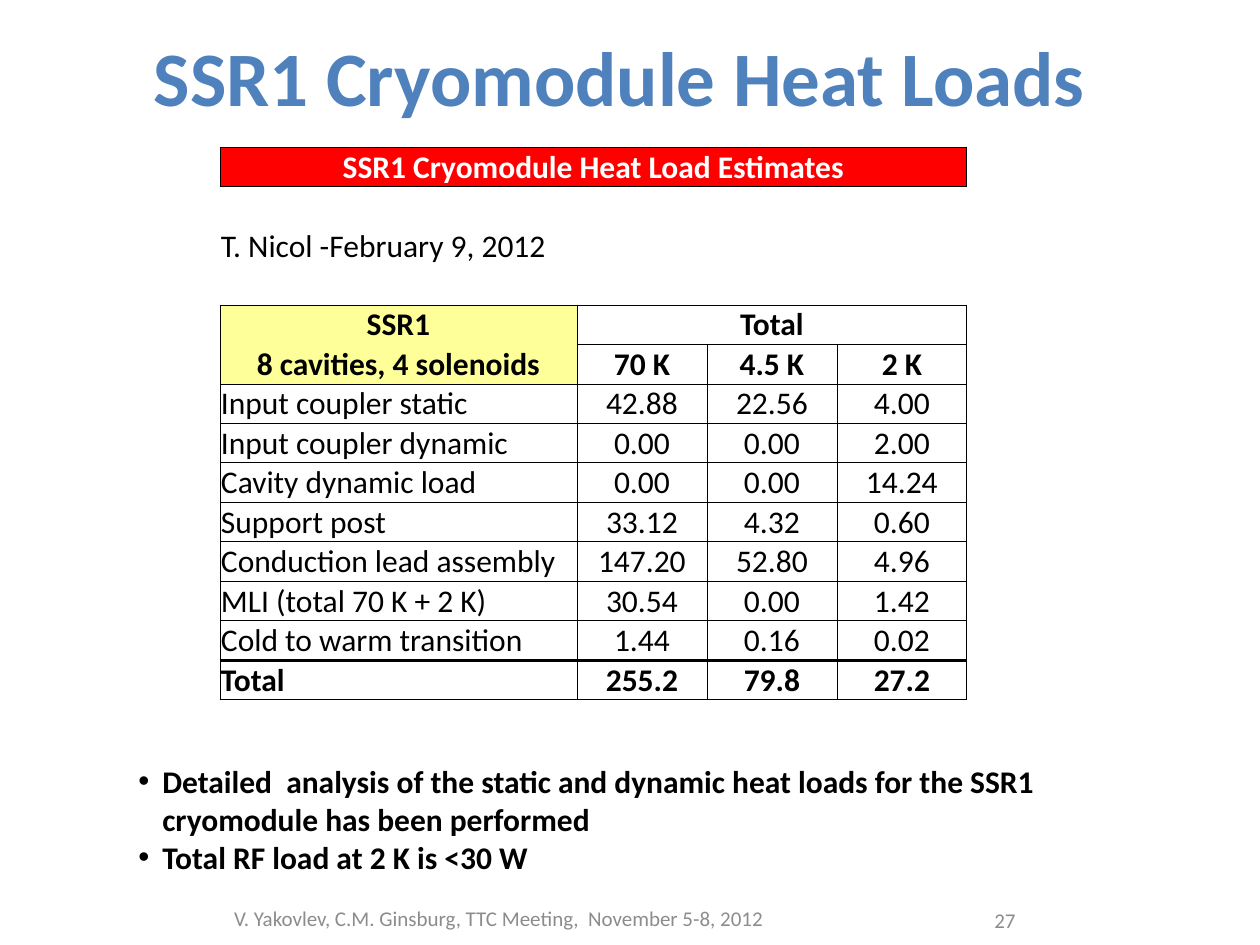
"""Builds the SSR1 cryomodule heat load slide."""
import dataclasses

import lxml.etree
import pptx
import pptx.dml.color
import pptx.enum.text
import pptx.oxml.ns
import pptx.util

ALIGN = pptx.enum.text.PP_ALIGN
ANCHOR = pptx.enum.text.MSO_ANCHOR
FIT = pptx.enum.text.MSO_AUTO_SIZE


@dataclasses.dataclass(frozen=True)
class Theme:
    font: str = "Calibri"
    title: str = "4F81BD"
    ink: str = "000000"
    light: str = "FFFFFF"
    muted: str = "8C8C8C"
    banner: str = "FF0000"
    heading: str = "FFFF99"
    title_size: int = 44
    body_size: int = 18
    footer_size: int = 12
    thin: float = 0.5
    thick: float = 2


THEME = Theme()


def px(length):
    return pptx.util.Emu(round(length * 914400 / 126))


def rgb(color):
    return pptx.dml.color.RGBColor.from_string(color)


def add_element(parent, tag, **attributes):
    return lxml.etree.SubElement(parent, pptx.oxml.ns.qn(tag), **attributes)


def write(frame, text, size=THEME.body_size, color=THEME.ink, bold=False,
          align=ALIGN.LEFT, anchor=ANCHOR.TOP, bullet=None):
    frame.word_wrap = True
    frame.vertical_anchor = anchor
    for index, line in enumerate(text.split("\n")):
        paragraph = frame.add_paragraph() if index else frame.paragraphs[0]
        paragraph.alignment = align
        if bullet:
            properties = paragraph._p.get_or_add_pPr()
            properties.set("marL", str(px(24)))
            properties.set("indent", str(-px(24)))
            add_element(properties, "a:buFont", typeface="Arial")
            add_element(properties, "a:buChar", char=bullet)
        run = paragraph.add_run()
        run.text = line
        run.font.name = THEME.font
        run.font.size = pptx.util.Pt(size)
        run.font.bold = bold
        run.font.color.rgb = rgb(color)


def set_borders(cell, widths):
    properties = cell._tc.get_or_add_tcPr()
    for side in "LRTB":
        width = widths.get(side, 0)
        line = add_element(properties, f"a:ln{side}", w=str(pptx.util.Pt(width)))
        if width:
            fill = add_element(line, "a:solidFill")
            add_element(fill, "a:srgbClr", val=THEME.ink)
        else:
            add_element(line, "a:noFill")


class SlideBuilder:
    def __init__(self, presentation, theme):
        self.theme = theme
        self.slide = presentation.slides.add_slide(presentation.slide_layouts[5])

    def title(self, text, left, top, width, height):
        shape = self.slide.shapes.title
        shape.left, shape.top = px(left), px(top)
        shape.width, shape.height = px(width), px(height)
        shape.text_frame.auto_size = FIT.NONE
        write(shape.text_frame, text, size=self.theme.title_size, bold=True,
              color=self.theme.title, align=ALIGN.CENTER, anchor=ANCHOR.MIDDLE)

    def text(self, text, left, top, width, height, fit=FIT.NONE, **style):
        shape = self.slide.shapes.add_textbox(px(left), px(top), px(width), px(height))
        write(shape.text_frame, text, **style)
        shape.text_frame.auto_size = fit

    def footer(self, text, left, top, width, height, align):
        self.text(text, left, top, width, height, size=self.theme.footer_size,
                  color=self.theme.muted, align=align, anchor=ANCHOR.MIDDLE)

    def table(self, rows, left, top, widths, row_height, merges):
        table = self.slide.shapes.add_table(
            len(rows), len(widths), px(left), px(top),
            px(sum(widths)), px(row_height * len(rows))).table
        table.first_row = table.horz_banding = False
        for column, width in zip(table.columns, widths):
            column.width = px(width)
        for row, (texts, style, sides) in enumerate(rows):
            table.rows[row].height = px(row_height)
            for column in range(len(widths)):
                text = texts[column] if column < len(texts) else ""
                self.cell(table.cell(row, column), text, column, style, sides)
        for row, first, last in merges:
            table.cell(row, first).merge(table.cell(row, last))

    def cell(self, cell, text, column, style, sides):
        cell.margin_left = cell.margin_right = cell.margin_top = px(1)
        cell.margin_bottom = 0
        cell.vertical_anchor = ANCHOR.BOTTOM
        lead = column == 0
        set_borders(cell, style.get("lead_sides", sides) if lead else sides)
        fill = style.get("fill") if lead else None
        if fill:
            cell.fill.solid()
            cell.fill.fore_color.rgb = rgb(fill)
        else:
            cell.fill.background()
        if text:
            centred = not lead or style.get("centre_lead")
            write(cell.text_frame, text, bold=style.get("bold", False),
                  color=style.get("color", self.theme.ink), anchor=ANCHOR.BOTTOM,
                  align=ALIGN.CENTER if centred else ALIGN.LEFT)


def heat_load_rows(theme):
    grid = dict.fromkeys("LRTB", theme.thin)
    top_open = {side: theme.thin for side in "LRB"}
    bottom_open = {side: theme.thin for side in "LRT"}
    heading = {"bold": True, "centre_lead": True, "fill": theme.heading}
    banner = {**heading, "fill": theme.banner, "color": theme.light}
    loads = [
        ("Input coupler static", "42.88", "22.56", "4.00"),
        ("Input coupler dynamic", "0.00", "0.00", "2.00"),
        ("Cavity dynamic load", "0.00", "0.00", "14.24"),
        ("Support post", "33.12", "4.32", "0.60"),
        ("Conduction lead assembly", "147.20", "52.80", "4.96"),
        ("MLI (total 70 K + 2 K)", "30.54", "0.00", "1.42"),
    ]
    return [
        (("SSR1 Cryomodule Heat Load Estimates",), banner, grid),
        ((), {}, {"T": theme.thin}),
        (("T. Nicol -February 9, 2012",), {}, {}),
        ((), {}, {"B": theme.thin}),
        (("SSR1", "Total"), {**heading, "lead_sides": bottom_open}, grid),
        (("8 cavities, 4 solenoids", "70 K", "4.5 K", "2 K"),
         {**heading, "lead_sides": top_open}, grid),
        *((load, {}, grid) for load in loads),
        (("Cold to warm transition", "1.44", "0.16", "0.02"), {},
         {**grid, "B": theme.thick}),
        (("Total", "255.2", "79.8", "27.2"), {"bold": True},
         {**grid, "T": theme.thick}),
    ]


def main():
    presentation = pptx.Presentation()
    presentation.slide_width, presentation.slide_height = px(1260), px(945)
    builder = SlideBuilder(presentation, THEME)
    builder.title("SSR1 Cryomodule Heat Loads", 53, 21, 1134, 110)
    builder.footer("V. Yakovlev, C.M. Ginsburg, TTC Meeting,  November 5-8, 2012",
                   63, 892, 872, 53, ALIGN.CENTER)
    builder.footer("27", 955, 895, 73, 50, ALIGN.RIGHT)
    builder.table(heat_load_rows(THEME), 220, 147, (357, 130, 130, 130), 39,
                  merges=((0, 0, 3), (4, 1, 3)))
    builder.text("Detailed  analysis of the static and dynamic heat loads for the SSR1 "
                 "cryomodule has been performed\nTotal RF load at 2 K is <30 W",
                 126, 756, 1071, 165, fit=FIT.SHAPE_TO_FIT_TEXT, bold=True, bullet="•")
    presentation.save("out.pptx")


if __name__ == "__main__":
    main()
